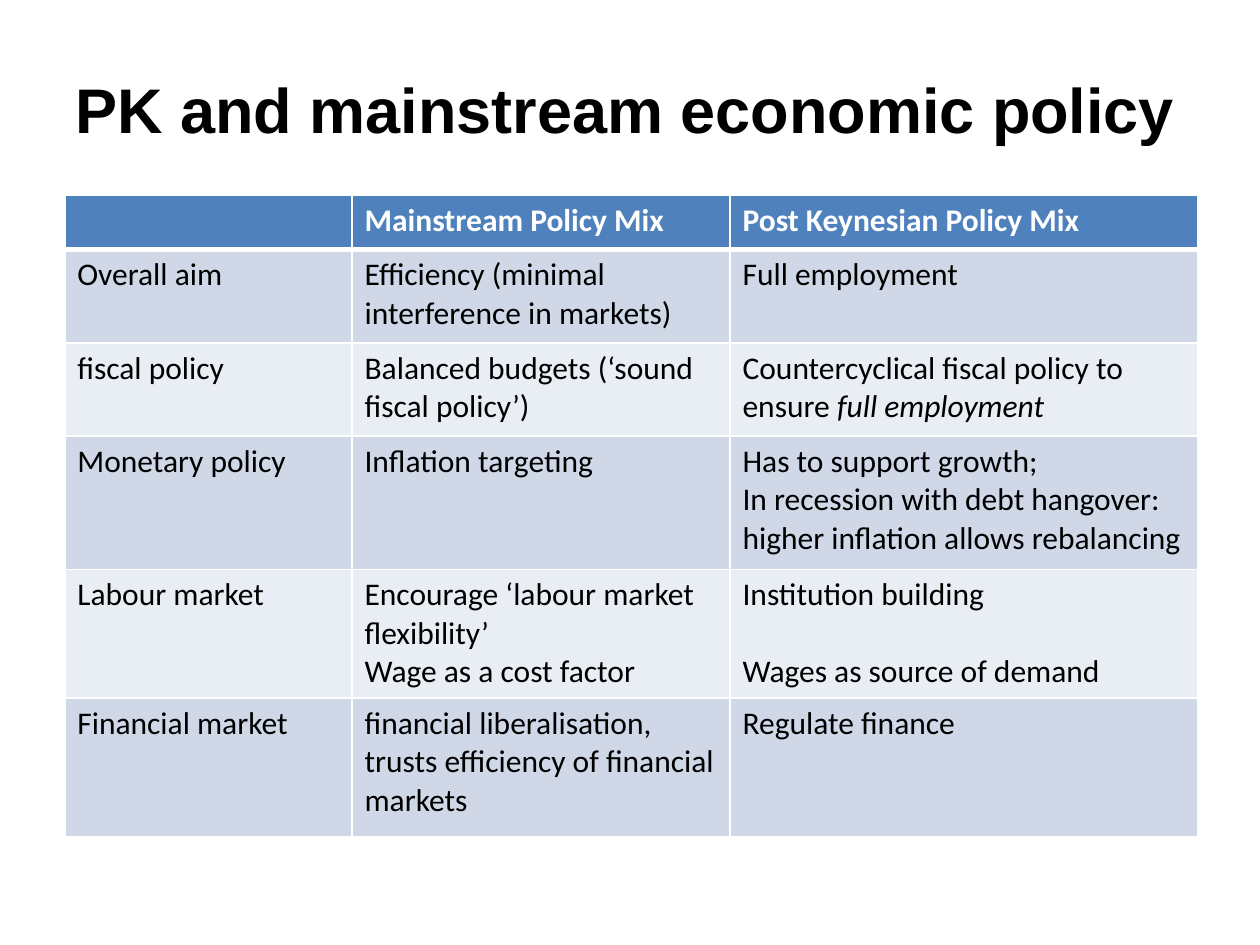
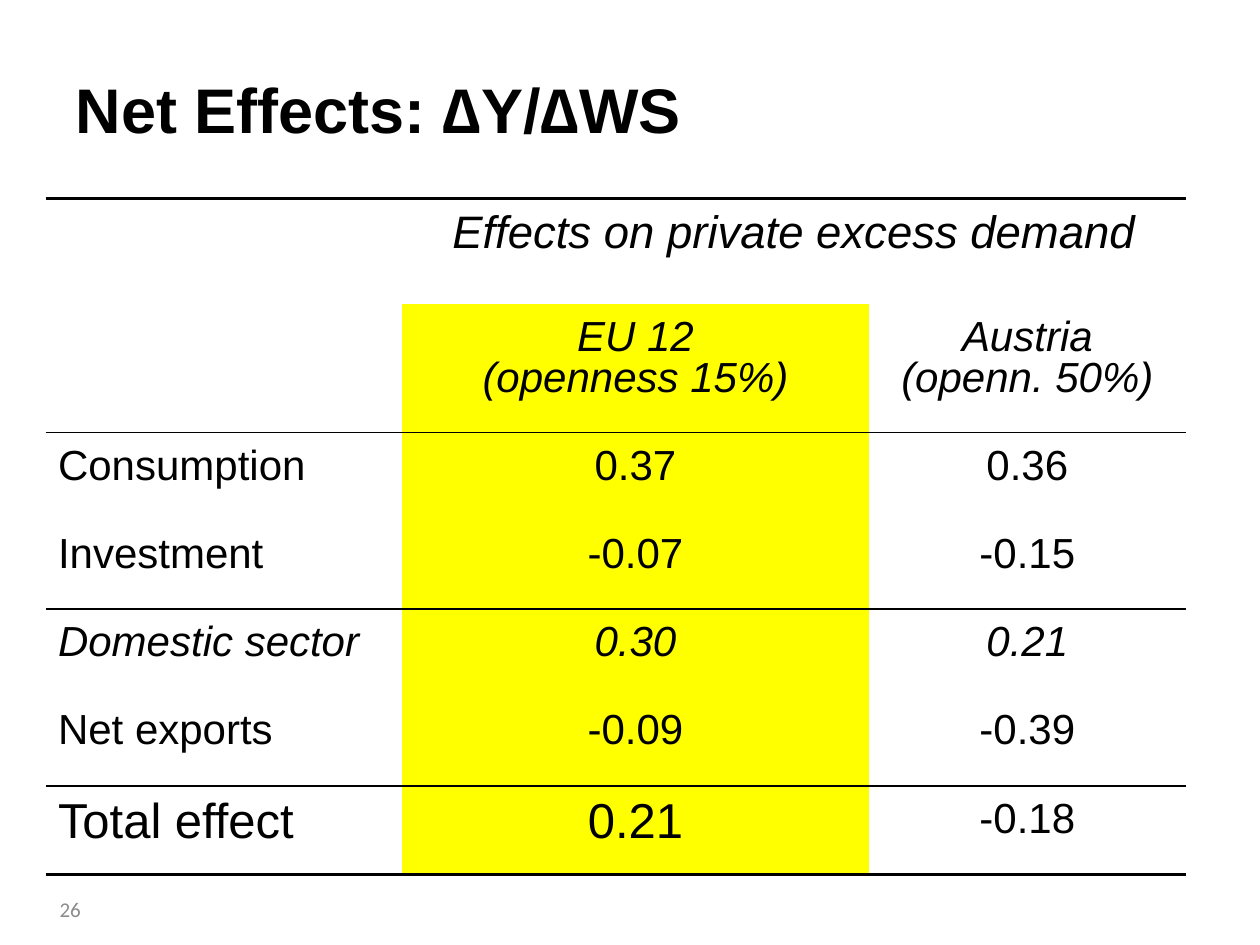
from dataclasses import dataclass

from lxml import etree
from pptx import Presentation
from pptx.dml.color import RGBColor
from pptx.enum import text
from pptx.oxml.ns import qn
from pptx.util import Cm, Pt


@dataclass(frozen=True)
class Theme:
    black: str = "000000"
    white: str = "FFFFFF"
    header: str = "4F81BD"
    bands: tuple = ("D0D8E8", "E9EDF4")
    highlight: str = "FFFF00"
    footer: str = "8C8C8C"
    heading_font: str = "Arial"
    body_font: str = "Calibri"
    title_size: int = 36
    policy_size: int = 18
    effects_size: int = 24
    span_size: int = 26
    total_size: int = 28
    footer_size: int = 12


THEME = Theme()
LEFT, CENTER, RIGHT = (text.PP_ALIGN.LEFT, text.PP_ALIGN.CENTER, text.PP_ALIGN.RIGHT)

POLICY_ROWS = [
    ("", "Mainstream Policy Mix", "Post Keynesian Policy Mix"),
    ("Overall aim", "Efficiency (minimal interference in markets)", "Full employment"),
    ("fiscal policy", "Balanced budgets (‘sound fiscal policy’)",
     "Countercyclical fiscal policy to ensure *full employment*"),
    ("Monetary policy", "Inflation targeting",
     "Has to support growth;\n"
     "In recession with debt hangover: higher inflation allows rebalancing"),
    ("Labour market", "Encourage ‘labour market flexibility’\nWage as a cost factor",
     "Institution building\nWages as source of demand"),
    ("Financial market",
     "financial liberalisation, trusts efficiency of financial markets", "Regulate finance"),
]
EFFECT_ROWS = [
    ("", "Effects on private excess demand", ""),
    ("", "EU 12\n(openness 15%)", "Austria\n(openn. 50%)"),
    ("Consumption", "0.37", "0.36"),
    ("Investment", "-0.07", "-0.15"),
    ("Domestic sector", "0.30", "0.21"),
    ("Net exports", "-0.09", "-0.39"),
    ("Total effect", "0.21", "-0.18"),
]


def write(frame, content, size, font=THEME.heading_font, color=THEME.black, bold=False,
          italic=False, align=LEFT, spacing=None, last_gap=None):
    """Each line becomes a paragraph; *asterisks* enclose italic words."""
    lines = content.split("\n")
    for number, line in enumerate(lines):
        paragraph = frame.paragraphs[0] if number == 0 else frame.add_paragraph()
        paragraph.alignment = align
        if spacing:
            paragraph.line_spacing = spacing
        if last_gap and number == len(lines) - 1:
            paragraph.space_before = Pt(last_gap)
        for part, words in enumerate(line.split("*")):
            if words:
                run = paragraph.add_run()
                run.text = words
                run.font.size, run.font.name = Pt(size), font
                run.font.bold, run.font.italic = bold, italic or part % 2 == 1
                run.font.color.rgb = RGBColor.from_string(color)


def add_title(slide, content, left, top, width, height):
    title = slide.shapes.title
    title.left, title.top, title.width, title.height = map(Cm, (left, top, width, height))
    frame = title.text_frame
    frame.word_wrap = True
    frame.auto_size = text.MSO_AUTO_SIZE.NONE
    frame.vertical_anchor = text.MSO_ANCHOR.MIDDLE
    write(frame, content, THEME.title_size, bold=True)


def add_page_number(slide, number, left, top, width, height):
    box = slide.shapes.add_textbox(*map(Cm, (left, top, width, height)))
    box.text_frame.word_wrap = True
    box.text_frame.vertical_anchor = text.MSO_ANCHOR.MIDDLE
    write(box.text_frame, number, THEME.footer_size, THEME.body_font, THEME.footer, align=RIGHT)


def set_borders(cell, color, left, right, top, bottom):
    """Widths are points; zero hides an edge."""
    properties = cell._tc.get_or_add_tcPr()
    for index, (side, width) in enumerate(zip("LRTB", (left, right, top, bottom))):
        line = etree.Element(qn(f"a:ln{side}"), w=str(Pt(width)))
        if width:
            fill = etree.SubElement(line, qn("a:solidFill"))
            etree.SubElement(fill, qn("a:srgbClr"), val=color)
        else:
            etree.SubElement(line, qn("a:noFill"))
        properties.insert(index, line)


def add_grid(slide, left, top, widths, heights, rules, rule_color, side_rule, fill_of, inset):
    """Empty table; rules holds the width of each horizontal line from top to bottom."""
    table = slide.shapes.add_table(
        len(heights), len(widths), Cm(left), Cm(top), Cm(sum(widths)), Cm(sum(heights))).table
    table.first_row = table.horz_banding = False
    for column, width in zip(table.columns, widths):
        column.width = Cm(width)
    for r, height in enumerate(heights):
        table.rows[r].height = Cm(height)
        for c in range(len(widths)):
            cell = table.cell(r, c)
            cell.margin_left = cell.margin_right = Cm(0.25)
            cell.margin_top, cell.margin_bottom = Cm(inset), Cm(0.13)
            color = fill_of(r, c)
            if color:
                cell.fill.solid()
                cell.fill.fore_color.rgb = RGBColor.from_string(color)
            else:
                cell.fill.background()
            set_borders(cell, rule_color, side_rule, side_rule, rules[r], rules[r + 1])
    return table


def add_policy_table(slide, left, top):
    table = add_grid(
        slide, left, top, widths=(5.79, 7.62, 9.42),
        heights=(1.09, 1.88, 1.88, 2.69, 2.59, 2.79),
        rules=(1, 3, 1, 1, 1, 1, 1), rule_color=THEME.white, side_rule=1, inset=0.13,
        fill_of=lambda r, c: THEME.bands[(r - 1) % 2] if r else THEME.header)
    for r, row in enumerate(POLICY_ROWS):
        for c, content in enumerate(row):
            # Wages line up across both policy mixes
            gap = 22 if content.startswith("Institution") else None
            write(table.cell(r, c).text_frame, content, THEME.policy_size, THEME.body_font,
                  THEME.black if r else THEME.white, bold=r == 0, last_gap=gap)


def add_effects_table(slide, left, top):
    table = add_grid(
        slide, left, top, widths=(7.19, 9.4, 6.4), heights=(2.13, 2.59) + (1.78,) * 5,
        rules=(2.25, 0, 1, 0, 1, 0, 1, 2), rule_color=THEME.black, side_rule=0, inset=0.3,
        fill_of=lambda r, c: THEME.highlight if r and c == 1 else None)
    table.cell(0, 1).merge(table.cell(0, 2))
    total = len(EFFECT_ROWS) - 1
    for r, row in enumerate(EFFECT_ROWS):
        for c, content in enumerate(row):
            if not content:
                continue
            size = THEME.effects_size
            if r == 0:
                size = THEME.span_size
            elif r == total and c < 2:
                size = THEME.total_size
            write(table.cell(r, c).text_frame, content, size, italic=r in (0, 1, 4),
                  align=CENTER if c else LEFT, spacing=0.87)


def add_titled_slide(deck, title):
    slide = deck.slides.add_slide(deck.slide_layouts[5])
    add_title(slide, title, 1.27, 0.79, 22.86, 2.77)
    return slide


def main():
    deck = Presentation()
    deck.slide_width, deck.slide_height = Cm(25.4), Cm(19.05)

    # Policy comparison
    policy = add_titled_slide(deck, "PK and mainstream economic policy")
    add_policy_table(policy, 1.31, 3.94)

    # Wage share effects
    effects = add_titled_slide(deck, "Net Effects: ∆Y/∆WS")
    add_page_number(effects, "26", 0, 17.78, 1.88, 1.09)
    add_effects_table(effects, 0.92, 4)

    deck.save("out.pptx")


if __name__ == "__main__":
    main()
